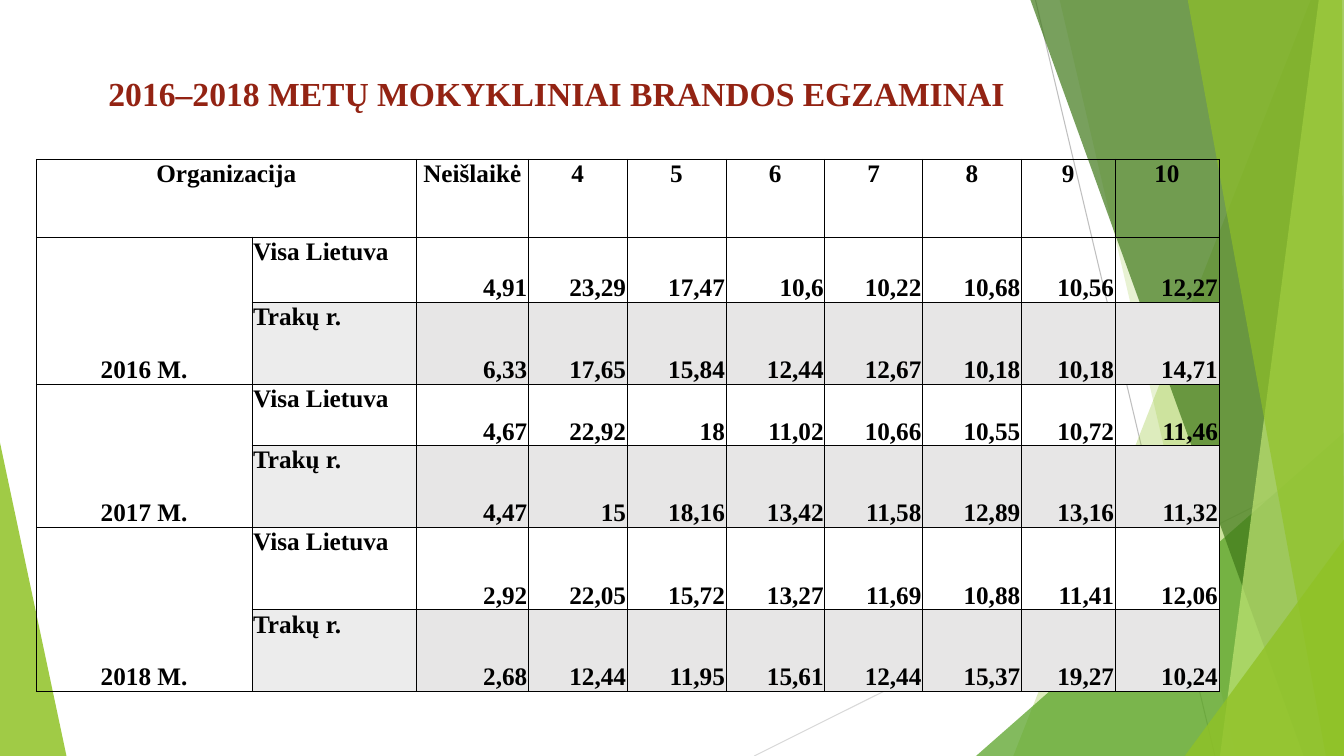
from lxml.etree import SubElement
from pptx import Presentation
from pptx.dml.color import RGBColor
from pptx.enum.shapes import MSO_CONNECTOR as Link
from pptx.enum.text import MSO_ANCHOR as Anchor, PP_ALIGN as Align
from pptx.oxml import parse_xml
from pptx.oxml.ns import nsdecls, qn
from pptx.util import Pt

PX = 9144  # EMU in one px, 100 px to the inch
WIDE, HIGH = 1333, 750

FACETS = [  # colour, opacity in percent, corners
    ("90C226", 85, [(0, 439), (66, 750), (0, 750)]),
    ("90C226", 30, [(1300, 0), (1005, 750), (1333, 750), (1333, 0)]),
    ("90C226", 20, [(1051, 0), (1226, 750), (1333, 750), (1333, 0)]),
    ("54A021", 72, [(968, 750), (1333, 429), (1333, 750)]),
    ("3F7819", 70, [(1022, 0), (1293, 750), (1333, 750), (1333, 0)]),
    ("C0E474", 70, [(1308, 0), (1210, 750), (1333, 750), (1333, 0)]),
    ("90C226", 65, [(1178, 0), (1315, 750), (1333, 750), (1331, 0)]),
    ("90C226", 80, [(1175, 750), (1333, 535), (1333, 750)]),
]
COLS = [214, 163, 111, 98, 98, 98, 97, 98, 93, 103]
ROWS = [77, 65, 81, 61, 81, 82, 81]
HEAD = ["Organizacija", "", "Neišlaikė", "4", "5", "6", "7", "8", "9", "10"]
YEARS = ["2016 M.", "2017 M.", "2018 M."]
AREAS = ["Visa Lietuva", "Trakų r."]
MARKS = [
    "4,91 23,29 17,47 10,6 10,22 10,68 10,56 12,27",
    "6,33 17,65 15,84 12,44 12,67 10,18 10,18 14,71",
    "4,67 22,92 18 11,02 10,66 10,55 10,72 11,46",
    "4,47 15 18,16 13,42 11,58 12,89 13,16 11,32",
    "2,92 22,05 15,72 13,27 11,69 10,88 11,41 12,06",
    "2,68 12,44 11,95 15,61 12,44 15,37 19,27 10,24",
]


def rgb(code):
    return RGBColor.from_string(code)


class Deck:
    font = "Times New Roman"
    ink = "000000"

    def __init__(self):
        self.file = Presentation()
        self.file.slide_width, self.file.slide_height = WIDE * PX, HIGH * PX
        self.slide = self.file.slides.add_slide(self.file.slide_layouts[5])

    def facet(self, color, alpha, points):
        """Draw a see-through polygon."""
        pen = self.slide.shapes.build_freeform(*points[0], scale=PX)
        pen.add_line_segments(points[1:], close=True)
        shape = pen.convert_to_shape()
        shape.shadow.inherit = False
        shape.line.fill.background()
        shape.fill.solid()
        shape.fill.fore_color.rgb = rgb(color)
        tint = next(shape.element.iter(qn("a:srgbClr")))
        SubElement(tint, qn("a:alpha"), val=str(alpha * 1000))

    def line(self, color, *ends):
        link = self.slide.shapes.add_connector(
            Link.STRAIGHT, *[end * PX for end in ends])
        link.line.color.rgb = rgb(color)
        link.line.width = Pt(0.75)
        SubElement(link.element.spPr, qn("a:effectLst"))

    def text(self, frame, words, size, color, align):
        para = frame.paragraphs[0]
        para.alignment = align
        run = para.add_run()
        run.text = words
        run.font.name, run.font.size, run.font.bold = self.font, Pt(size), True
        run.font.color.rgb = rgb(color)

    def title(self, words, x, y, w, h):
        box = self.slide.shapes.title
        box.element.getparent().append(box.element)  # bring to front
        box.left, box.top, box.width, box.height = x * PX, y * PX, w * PX, h * PX
        box.text_frame.vertical_anchor = Anchor.TOP
        self.text(box.text_frame, words, 24, "932313", Align.CENTER)

    def grid(self, x, y, cols, rows):
        """Add an unfilled table with thin borders."""
        table = self.slide.shapes.add_table(
            len(rows), len(cols), x * PX, y * PX,
            sum(cols) * PX, sum(rows) * PX).table
        table.first_row = table.horz_banding = False
        for col, w in zip(table.columns, cols):
            col.width = w * PX
        for row, h in zip(table.rows, rows):
            row.height = h * PX
        for cell in table.iter_cells():
            cell.margin_left = cell.margin_right = cell.margin_top = PX
            cell.margin_bottom = 0
            props = cell._tc.get_or_add_tcPr()
            for side in "LRTB":
                props.append(parse_xml(
                    f'<a:ln{side} {nsdecls("a")} w="6350"><a:solidFill>'
                    f'<a:srgbClr val="{self.ink}"/></a:solidFill></a:ln{side}>'))
            cell.fill.background()
        return table

    def cell(self, cell, words, align, low=False, fill=None):
        cell.vertical_anchor = Anchor.BOTTOM if low else Anchor.TOP
        if fill:
            cell.fill.solid()
            cell.fill.fore_color.rgb = rgb(fill)
        self.text(cell.text_frame, words, 18, self.ink, align)


def main():
    deck = Deck()
    first, *rest = FACETS
    deck.facet(*first)
    deck.line("D9D9D9", 748, 750, 1333, 458)
    deck.line("BFBFBF", 1027, 0, 1205, 750)
    for facet in rest:
        deck.facet(*facet)
    deck.title("2016–2018 METŲ MOKYKLINIAI BRANDOS EGZAMINAI", 89, 67, 926, 144)

    table = deck.grid(36, 158, COLS, ROWS)
    table.cell(0, 0).merge(table.cell(0, 1))
    for col, words in enumerate(HEAD):
        if words:
            deck.cell(table.cell(0, col), words, Align.CENTER)
    for num, year in enumerate(YEARS):
        top = 2 * num + 1
        table.cell(top, 0).merge(table.cell(top + 1, 0))
        deck.cell(table.cell(top, 0), year, Align.CENTER, low=True)
    for row, marks in enumerate(MARKS, 1):
        local = row % 2 == 0
        plain = "FFFFFF" if row == 5 else None
        deck.cell(table.cell(row, 1), AREAS[local], Align.LEFT,
                  fill="ECECEC" if local else plain)
        for col, mark in enumerate(marks.split(), 2):
            deck.cell(table.cell(row, col), mark, Align.RIGHT, low=True,
                      fill="E7E6E6" if local else plain)
    deck.file.save("out.pptx")


if __name__ == "__main__":
    main()
